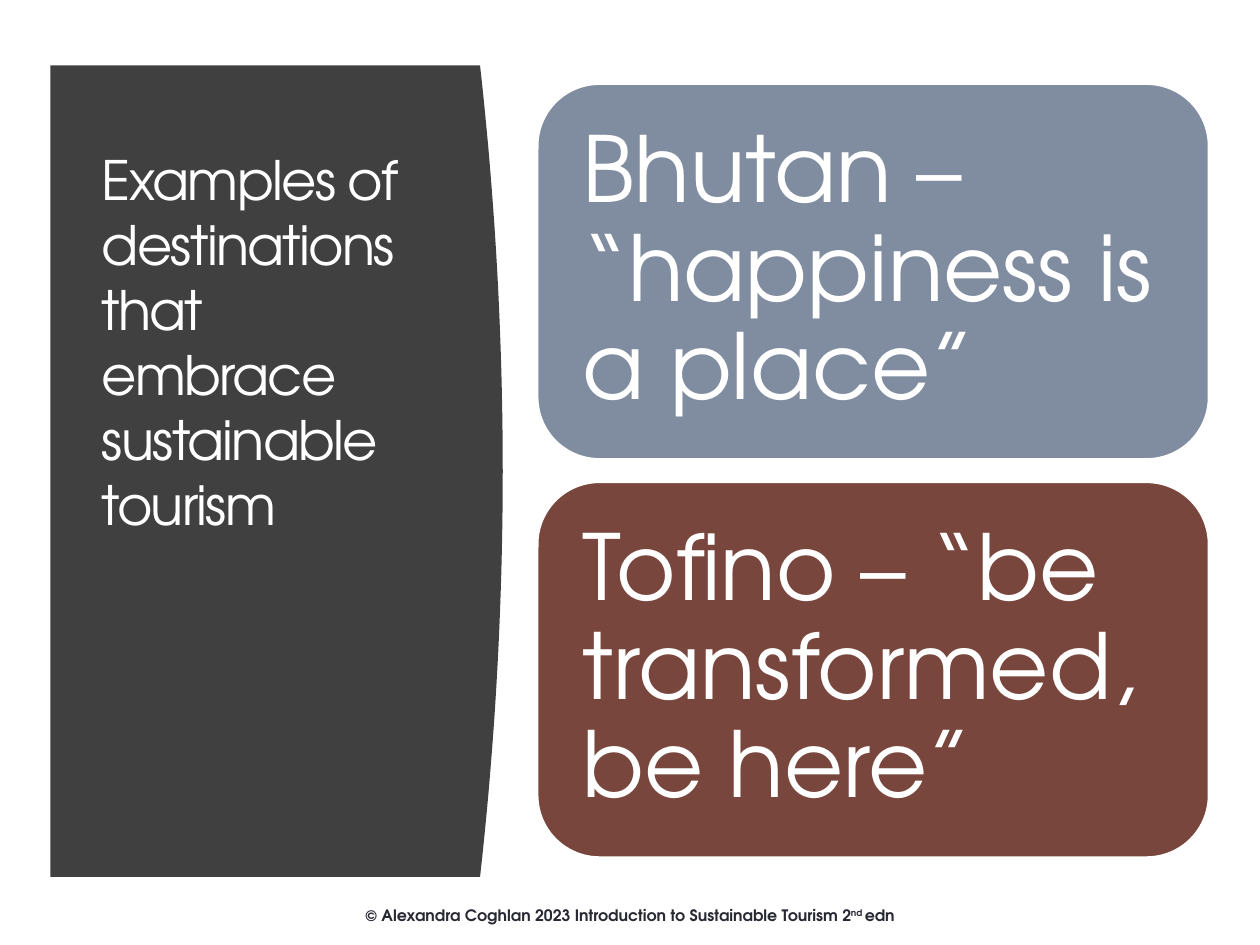
from dataclasses import dataclass

from pptx import Presentation
from pptx.dml.color import RGBColor
from pptx.enum.shapes import MSO_SHAPE
from pptx.enum.text import MSO_ANCHOR, PP_ALIGN
from pptx.util import Inches, Pt

ROUNDED = MSO_SHAPE.ROUNDED_RECTANGLE
TOP, MIDDLE = MSO_ANCHOR.TOP, MSO_ANCHOR.MIDDLE
LEFT, CENTER = PP_ALIGN.LEFT, PP_ALIGN.CENTER


@dataclass(frozen=True)
class Theme:
    font: str = "TeX Gyre Adventor"
    white: str = "FFFFFF"
    panel: str = "404040"
    bhutan: str = "808DA0"
    tofino: str = "79463D"
    footer: str = "292934"
    title_size: float = 31
    card_size: float = 52
    footer_size: float = 9
    card_line: float = 2.08


@dataclass(frozen=True)
class Box:
    left: float
    top: float
    width: float
    height: float

    def lengths(self) -> list:
        return [Inches(v) for v in (self.left, self.top, self.width, self.height)]

    def inset(self, gap: float) -> "Box":
        return Box(self.left + gap, self.top + gap,
                   self.width - 2 * gap, self.height - 2 * gap)


@dataclass(frozen=True)
class Destination:
    text: str
    color: str


THEME = Theme()
PANEL = Box(0.4, 0.52, 3.41, 6.44)
PANEL_BULGE = 0.18
CURVE_STEPS = 40
TITLE = Box(0.71, 1.11, 2.8, 5.24)
FOOTER = Box(2.64, 7.14, 4.72, 0.25)
FIRST_CARD = Box(4.26, 0.66, 5.34, 2.99)
CARD_PITCH = 3.16
CARD_INSET = 0.145
CARD_MARGIN = 0.22
DESTINATIONS = [
    Destination("Bhutan – “happiness is a place”", THEME.bhutan),
    Destination("Tofino – “be transformed, be here”", THEME.tofino),
]


def apply_format(target, values: dict) -> None:
    for name, value in values.items():
        setattr(target, name, value)


def add_text(slide, box: Box, runs: list, size: float, color: str,
             frame_format: dict, paragraph_format: dict, bold: bool = False) -> None:
    """Each run is a text with its extra character properties."""
    frame = slide.shapes.add_textbox(*box.lengths()).text_frame
    apply_format(frame, {"word_wrap": True, **frame_format})
    paragraph = frame.paragraphs[0]
    apply_format(paragraph, paragraph_format)
    for text, extras in runs:
        run = paragraph.add_run()
        run.text = text
        apply_format(run.font, {"name": THEME.font, "size": Pt(size), "bold": bold})
        run.font.color.rgb = RGBColor.from_string(color)
        for name, value in extras.items():
            run._r.get_or_add_rPr().set(name, value)


def paint(shape, color: str) -> None:
    shape.shadow.inherit = False
    shape.fill.solid()
    shape.fill.fore_color.rgb = RGBColor.from_string(color)


def add_panel(slide) -> None:
    """Draw the dark panel, its right side bowed as a parabola."""
    right, bottom = PANEL.left + PANEL.width, PANEL.top + PANEL.height
    curve = []
    for step in range(CURVE_STEPS + 1):
        t = step / CURVE_STEPS
        curve.append((Inches(right + PANEL_BULGE * 4 * t * (1 - t)),
                      Inches(PANEL.top + PANEL.height * t)))
    builder = slide.shapes.build_freeform(Inches(PANEL.left), Inches(PANEL.top))
    builder.add_line_segments(curve + [(Inches(PANEL.left), Inches(bottom))], close=True)
    panel = builder.convert_to_shape()
    paint(panel, THEME.panel)
    panel.line.fill.background()


def add_card(slide, box: Box, destination: Destination) -> None:
    card = slide.shapes.add_shape(ROUNDED, *box.lengths())
    paint(card, destination.color)
    card.line.color.rgb = RGBColor.from_string(THEME.white)
    card.line.width = Pt(THEME.card_line)
    margins = {f"margin_{side}": Inches(CARD_MARGIN)
               for side in ("left", "top", "right", "bottom")}
    add_text(slide, box.inset(CARD_INSET), [(destination.text, {})],
             THEME.card_size, THEME.white,
             {"vertical_anchor": MIDDLE, **margins},
             {"alignment": LEFT, "line_spacing": 0.9})


def main() -> None:
    deck = Presentation()
    deck.slide_width, deck.slide_height = Inches(10), Inches(7.5)
    slide = deck.slides.add_slide(deck.slide_layouts[6])

    # Copyright line
    add_text(slide, FOOTER,
             [("© Alexandra Coghlan 2023 Introduction to Sustainable Tourism 2", {}),
              ("nd ", {"baseline": "30000"}),
              ("edn", {})],
             THEME.footer_size, THEME.footer,
             {"vertical_anchor": TOP}, {"alignment": CENTER}, bold=True)

    # Title panel
    add_panel(slide)
    add_text(slide, TITLE,
             [("Examples of destinations that embrace sustainable tourism",
               {"spc": "-100"})],
             THEME.title_size, THEME.white,
             {"vertical_anchor": TOP}, {"alignment": LEFT})

    # Destination cards
    for row, destination in enumerate(DESTINATIONS):
        box = Box(FIRST_CARD.left, FIRST_CARD.top + row * CARD_PITCH,
                  FIRST_CARD.width, FIRST_CARD.height)
        add_card(slide, box, destination)

    deck.save("out.pptx")


if __name__ == "__main__":
    main()
